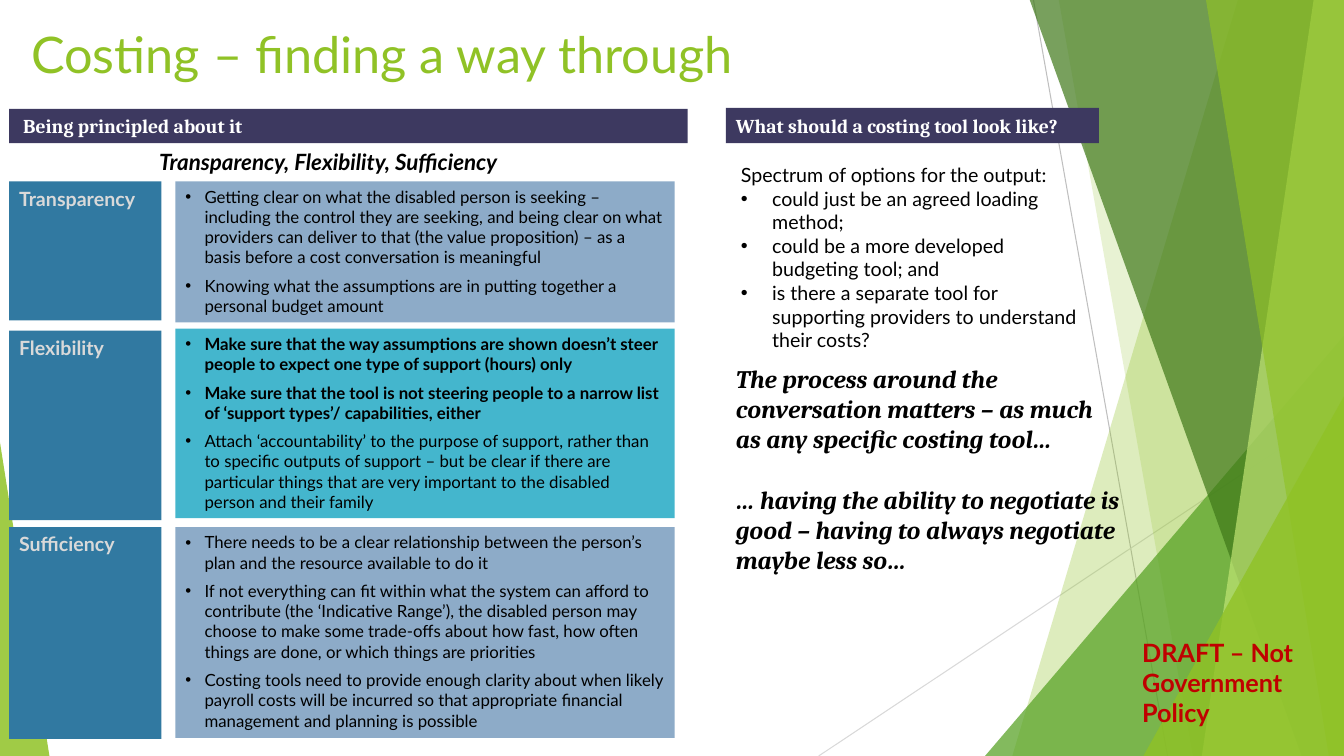
from lxml.etree import SubElement
from pptx import Presentation
from pptx.dml.color import RGBColor
from pptx.enum.shapes import MSO_CONNECTOR, MSO_SHAPE
from pptx.enum.text import MSO_ANCHOR, PP_ALIGN
from pptx.oxml.ns import qn
from pptx.util import Pt

PX = 9144  # 100 px to the inch
WIDTH, HEIGHT = 1333, 750

GREEN, DARK_BLUE, PALE_BLUE, TURQUOISE = "90C226", "3179A1", "8DABC8", "44B6CD"
HEADER_FILL = "3D3960"

TITLE = {"name": "Lato", "size": Pt(36), "bold": False, "color": GREEN}
HEADER = {"name": "Cambria", "size": Pt(14), "bold": True, "color": "FFFFFF"}
LABEL = {"name": "Lato", "size": Pt(14), "bold": True, "color": "D9D9D9"}
POINT = {"name": "Lato", "size": Pt(12), "bold": False, "color": "000000"}
BOLD_POINT = POINT | {"bold": True}
OPTION = POINT | {"size": Pt(14)}
SUBTITLE = BOLD_POINT | {"size": Pt(16), "italic": True}
MESSAGE = SUBTITLE | {"name": "Cambria", "size": Pt(18)}
DRAFT = BOLD_POINT | {"size": Pt(18), "color": "C00000"}

# Label, label top and height, card top and height, card fill, points
PRINCIPLES = [
    ("Transparency", (72, 138), (72, 140), PALE_BLUE, [
        ("Getting clear on what the disabled person is seeking – including the control they are "
         "seeking, and being clear on what providers can deliver to that (the value proposition) "
         "– as a basis before a cost conversation is meaningful", POINT),
        ("Knowing what the assumptions are in putting together a personal budget amount", POINT),
    ]),
    ("Flexibility", (220, 188), (218, 188), TURQUOISE, [
        ("Make sure that the way assumptions are shown doesn’t steer people to expect one type "
         "of support (hours) only", BOLD_POINT),
        ("Make sure that the tool is not steering people to a narrow list of ‘support types’/ "
         "capabilities, either", BOLD_POINT),
        ("Attach ‘accountability’ to the purpose of support, rather than to specific outputs of "
         "support – but be clear if there are particular things that are very important to the "
         "disabled person and their family", POINT),
    ]),
    ("Sufficiency", (415, 210), (415, 209), PALE_BLUE, [
        ("There needs to be a clear relationship between the person’s plan and the resource "
         "available to do it", POINT),
        ("If not everything can fit within what the system can afford to contribute (the "
         "‘Indicative Range’), the disabled person may choose to make some trade-offs about how "
         "fast, how often things are done, or which things are priorities", POINT),
        ("Costing tools need to provide enough clarity about when likely payroll costs will be "
         "incurred so that appropriate financial management and planning is possible", POINT),
    ]),
]

OPTIONS = [
    "could just be an agreed loading method;",
    "could be a more developed budgeting tool; and",
    "is there a separate tool for supporting providers to understand their costs?",
]
MESSAGES = [
    "The process around the conversation matters – as much as any specific costing tool…",
    "… having the ability to negotiate is good – having to always negotiate maybe less so…",
]


def rgb(value):
    return RGBColor.from_string(value)


def emu(*lengths):
    return [length * PX for length in lengths]


def paint(shape, color, opacity=100):
    shape.shadow.inherit = False
    shape.line.fill.background()
    shape.fill.solid()
    shape.fill.fore_color.rgb = rgb(color)
    if opacity < 100:
        color_element = shape.element.spPr.find(qn("a:solidFill"))[0]
        SubElement(color_element, qn("a:alpha"), val=str(opacity * 1000))


def write(frame, items, indent=0, after=0, gap=0):
    """Write (text, format, bulleted) items, one paragraph each."""
    frame.word_wrap = True
    for index, (text, style, bulleted) in enumerate(items):
        paragraph = frame.add_paragraph() if index else frame.paragraphs[0]
        paragraph.alignment = PP_ALIGN.LEFT
        paragraph.space_before = Pt(gap if index else 0)
        paragraph.space_after = Pt(after)
        run = paragraph.add_run()
        run.text = text
        for name, value in style.items():
            if name == "color":
                run.font.color.rgb = rgb(value)
            else:
                setattr(run.font, name, value)
        if bulleted:
            properties = paragraph._p.get_or_add_pPr()
            properties.set("marL", str(indent * PX))
            properties.set("indent", str(-indent * PX))
            SubElement(properties, qn("a:buFont"), typeface="Arial")
            SubElement(properties, qn("a:buChar"), char="•")


def add_text(slide, box, items, **spacing):
    shape = slide.shapes.add_textbox(*emu(*box))
    write(shape.text_frame, items, **spacing)


def add_panel(slide, box, color, items, anchor=MSO_ANCHOR.TOP, inset=10, **spacing):
    shape = slide.shapes.add_shape(MSO_SHAPE.RECTANGLE, *emu(*box))
    paint(shape, color)
    shape.text_frame.vertical_anchor = anchor
    shape.text_frame.margin_left = inset * PX
    write(shape.text_frame, items, **spacing)


def add_header(slide, box, text, inset=10):
    add_panel(slide, box, HEADER_FILL, [(text, HEADER, False)], MSO_ANCHOR.MIDDLE, inset)


def add_line(slide, ends, color):
    line = slide.shapes.add_connector(MSO_CONNECTOR.STRAIGHT, *emu(*ends))
    line.line.color.rgb = rgb(color)
    line.line.width = Pt(0.75)
    SubElement(line.element.spPr, qn("a:effectLst"))


def add_band(slide, top_left, bottom_left, color, opacity):
    """A band from a slanted left side to the right edge of the slide."""
    builder = slide.shapes.build_freeform(top_left, -1, scale=PX)
    builder.add_line_segments([(WIDTH, -1), (WIDTH, HEIGHT), (bottom_left, HEIGHT)])
    paint(builder.convert_to_shape(), color, opacity)


def add_triangle(slide, box, apex, color, opacity):
    shape = slide.shapes.add_shape(MSO_SHAPE.ISOSCELES_TRIANGLE, *emu(*box))
    shape.adjustments[0] = apex
    paint(shape, color, opacity)


def add_backdrop(slide):
    add_line(slide, (1025, 0, 1158, HEIGHT), "BFBFBF")
    add_line(slide, (WIDTH, 403, 812, HEIGHT), "D9D9D9")
    add_band(slide, 1228, 1004, GREEN, 30)
    add_band(slide, 1050, 1183, GREEN, 20)
    add_triangle(slide, (977, 333, 356, 417), 1, "54A021", 72)
    add_band(slide, 1021, 1291, "3F7819", 70)
    add_band(slide, 1303, 1192, "C0E474", 70)
    add_band(slide, 1196, 1318, GREEN, 65)
    add_triangle(slide, (1134, 393, 199, 357), 1, GREEN, 80)
    add_triangle(slide, (0, 439, 49, 311), 0, GREEN, 85)


def add_title(slide, box):
    title = slide.shapes.title
    title.left, title.top, title.width, title.height = emu(*box)
    title.text_frame.vertical_anchor = MSO_ANCHOR.MIDDLE
    write(title.text_frame, [("Costing – finding a way through", TITLE, False)])
    title.element.getparent().append(title.element)  # in front of the backdrop


def add_principles(slide, box):
    left, top, width, _ = box
    add_header(slide, (left, top, width, 34), "Being principled about it", inset=14)
    add_text(slide, (left + 139, top + 34, 495, 38),
             [("Transparency, Flexibility, Sufficiency", SUBTITLE, False)])
    for label, label_span, card_span, color, points in PRINCIPLES:
        label_top, label_height = label_span
        card_top, card_height = card_span
        add_panel(slide, (left, top + label_top, 151, label_height), DARK_BLUE,
                  [(label, LABEL, False)])
        add_panel(slide, (left + 165, top + card_top, 495, card_height), color,
                  [(text, style, True) for text, style in points], indent=19, after=6)


def add_costing_tool(slide, box):
    left, top, width, _ = box
    add_header(slide, (left, top, 370, 35), "What should a costing tool look like?")
    options = [("Spectrum of options for the output:", OPTION, False)]
    options += [(text, OPTION, True) for text in OPTIONS]
    add_text(slide, (left + 5, top + 50, 365, 199), options, indent=31)
    add_text(slide, (left, top + 248, width, 222),
             [(text, MESSAGE, False) for text in MESSAGES], gap=22)


def main():
    presentation = Presentation()
    presentation.slide_width, presentation.slide_height = emu(WIDTH, HEIGHT)
    slide = presentation.slides.add_slide(presentation.slide_layouts[5])
    add_backdrop(slide)
    add_title(slide, (21, 12, 1244, 81))
    add_principles(slide, (9, 108, 673, 625))
    add_costing_tool(slide, (720, 107, 403, 470))
    add_text(slide, (1123, 627, 185, 101), [("DRAFT – Not Government Policy", DRAFT, False)])
    presentation.save("out.pptx")


if __name__ == "__main__":
    main()
